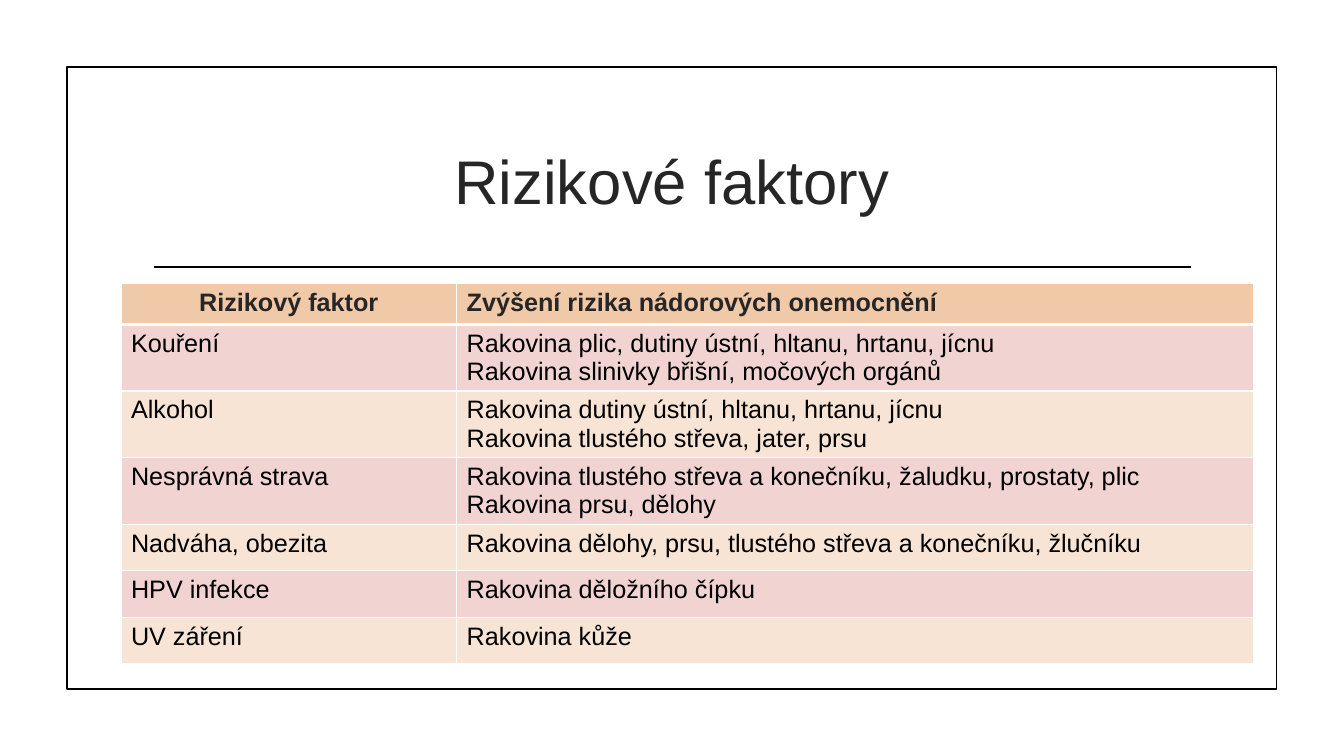
from lxml.etree import SubElement
from pptx import Presentation
from pptx.dml.color import RGBColor
from pptx.enum.shapes import MSO_CONNECTOR, MSO_SHAPE
from pptx.enum.text import MSO_ANCHOR, PP_ALIGN
from pptx.oxml import parse_xml
from pptx.oxml.ns import nsdecls, qn
from pptx.util import Pt

RISKS = [
    ("Rizikový faktor", "Zvýšení rizika nádorových onemocnění"),
    ("Kouření", "Rakovina plic, dutiny ústní, hltanu, hrtanu, jícnu\n"
                "Rakovina slinivky břišní, močových orgánů"),
    ("Alkohol", "Rakovina dutiny ústní, hltanu, hrtanu, jícnu\n"
                "Rakovina tlustého střeva, jater, prsu"),
    ("Nesprávná strava", "Rakovina tlustého střeva a konečníku, žaludku, prostaty, plic\n"
                         "Rakovina prsu, dělohy"),
    ("Nadváha, obezita", "Rakovina dělohy, prsu, tlustého střeva a konečníku, žlučníku"),
    ("HPV infekce", "Rakovina děložního čípku"),
    ("UV záření", "Rakovina kůže"),
]
COL_WIDTHS = [239.8, 569.5]
ROW_HEIGHTS = [29.2] + [47.3] * 3 + [33.3] * 3


def rgb(value):
    return RGBColor.from_string(value)


class SlideBuilder:
    font = "Arial"
    ink = "000000"
    heading = "262626"
    header_fill = "F0C9A9"
    bands = ["F1D4D2", "F7E4D4"]
    border = "FFFFFF"
    line_width = 1.25

    def __init__(self, s):
        self.s = s

    def style(self, p, size, color, bold=False, align=PP_ALIGN.LEFT):
        p.alignment = align
        p.font.name = self.font
        p.font.size = Pt(size)
        p.font.bold = bold
        p.font.color.rgb = rgb(color)

    def stroke(self, sp):
        sp.line.color.rgb = rgb(self.ink)
        sp.line.width = Pt(self.line_width)

    def frame(self, x, y, w, h):
        sp = self.s.shapes.add_shape(MSO_SHAPE.RECTANGLE, Pt(x), Pt(y), Pt(w), Pt(h))
        sp.shadow.inherit = False
        sp.fill.background()
        self.stroke(sp)

    def rule(self, x1, x2, y):
        sp = self.s.shapes.add_connector(MSO_CONNECTOR.STRAIGHT, Pt(x1), Pt(y), Pt(x2), Pt(y))
        self.stroke(sp)
        SubElement(sp._element.spPr, qn("a:effectLst"))

    def title(self, text, x, y, w, h):
        sp = self.s.shapes.title
        sp.left, sp.top, sp.width, sp.height = Pt(x), Pt(y), Pt(w), Pt(h)
        tf = sp.text_frame
        tf.text = text
        tf.vertical_anchor = MSO_ANCHOR.MIDDLE
        self.style(tf.paragraphs[0], 44, self.heading, align=PP_ALIGN.CENTER)

    def borders(self, cell, top, bottom):
        tc_pr = cell._tc.get_or_add_tcPr()
        for i, (side, width) in enumerate(zip("LRTB", (1, 1, top, bottom))):
            tc_pr.insert(i, parse_xml(
                f'<a:ln{side} {nsdecls("a")} w="{Pt(width)}"><a:solidFill>'
                f'<a:srgbClr val="{self.border}"/></a:solidFill></a:ln{side}>'))

    def table(self, rows, x, y, widths, heights):
        table = self.s.shapes.add_table(len(rows), len(widths), Pt(x), Pt(y),
                                        Pt(sum(widths)), Pt(sum(heights))).table
        for col, width in zip(table.columns, widths):
            col.width = Pt(width)
        for i, (row, height) in enumerate(zip(rows, heights)):
            table.rows[i].height = Pt(height)
            header = i == 0
            fill = self.header_fill if header else self.bands[(i - 1) % 2]
            color = self.heading if header else self.ink
            for j, text in enumerate(row):
                cell = table.cell(i, j)
                cell.text = text
                cell.fill.solid()
                cell.fill.fore_color.rgb = rgb(fill)
                self.borders(cell, 3 if i == 1 else 1, 3 if header else 1)
                align = PP_ALIGN.CENTER if header and j == 0 else PP_ALIGN.LEFT
                for p in cell.text_frame.paragraphs:
                    self.style(p, 18, color, header, align)


def main():
    prs = Presentation()
    prs.slide_width, prs.slide_height = Pt(960), Pt(540)
    slide = SlideBuilder(prs.slides.add_slide(prs.slide_layouts[5]))
    slide.frame(47.8, 48, 864, 444)
    slide.rule(110, 850.5, 190.8)
    slide.title("Rizikové faktory", 102, 77, 756, 103)
    slide.table(RISKS, 86.4, 202.6, COL_WIDTHS, ROW_HEIGHTS)
    prs.save("out.pptx")


if __name__ == "__main__":
    main()
